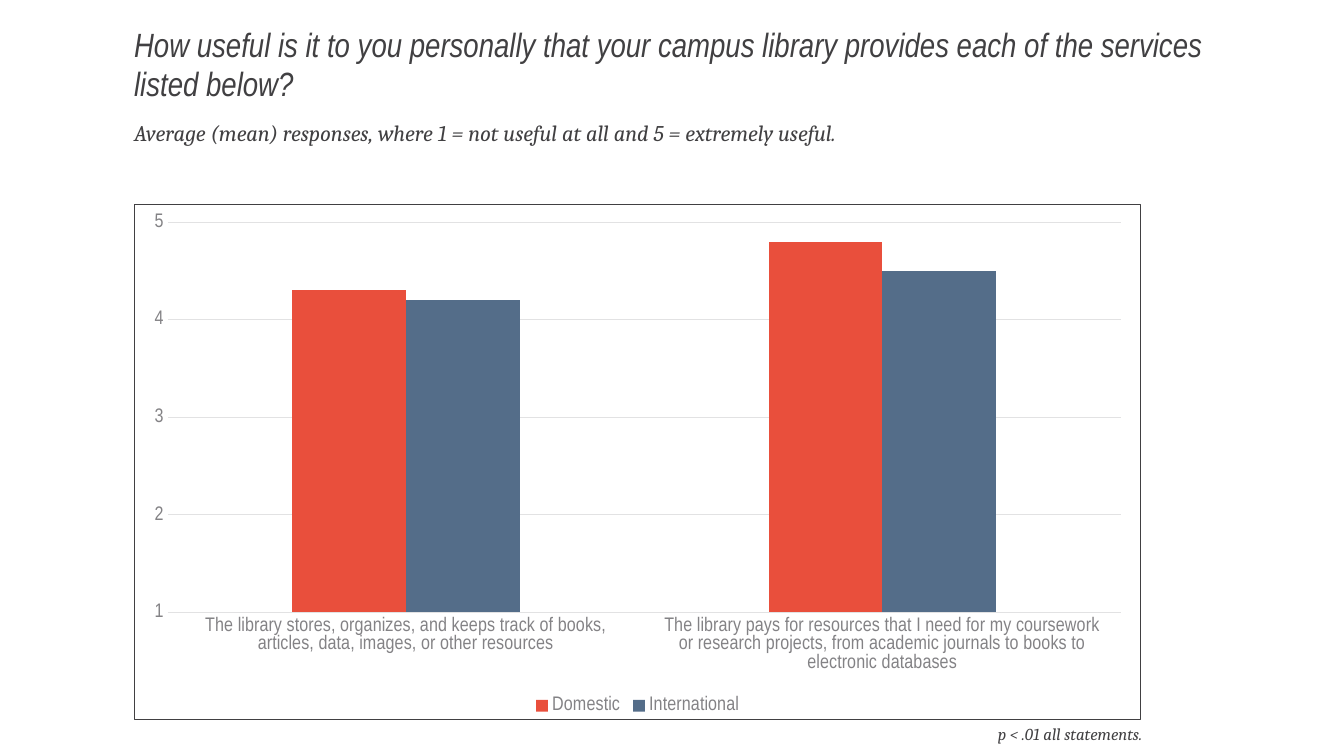
from dataclasses import dataclass

from lxml import etree
from pptx import Presentation
from pptx import util as u
from pptx.chart.data import CategoryChartData
from pptx.dml.color import RGBColor
from pptx.enum import chart as ch, text
from pptx.oxml import parse_xml
from pptx.oxml.ns import nsdecls, qn


@dataclass(frozen=True)
class Theme:
    ink: str = "414042"
    muted: str = "838285"
    grid: str = "E2E2E3"
    domestic: str = "E94F3C"
    international: str = "546D89"
    narrow: str = "Arial Narrow"
    serif: str = "Cambria"
    title: int = 24
    subtitle: int = 16
    axis: int = 14
    note: int = 12
    hairline: float = 0.75


theme = Theme()


def style_font(font, face, size, color, italic=False):
    font.name, font.size = face, u.Pt(size)
    font.bold, font.italic = False, italic
    font.color.rgb = RGBColor.from_string(color)


def write_line(frame, words, face, size, top, bottom, anchor, align):
    frame.word_wrap = True
    frame.auto_size = text.MSO_AUTO_SIZE.NONE
    frame.vertical_anchor = anchor
    frame.margin_left = frame.margin_right = 0
    frame.margin_top, frame.margin_bottom = u.Inches(top), u.Inches(bottom)
    line = frame.paragraphs[0]
    line.alignment = align
    run = line.add_run()
    run.text = words
    style_font(run.font, face, size, theme.ink, italic=True)
    return line


prs = Presentation()
prs.slide_width, prs.slide_height = u.Inches(13.33), u.Inches(7.5)
slide = prs.slides.add_slide(prs.slide_layouts[5])
left, width = u.Inches(1.33), u.Inches(9.99)

# Question
question = slide.shapes.title
question.left, question.top = left, u.Inches(0.27)
question.width, question.height = u.Inches(10.66), u.Inches(0.94)
question_line = write_line(
    question.text_frame,
    "How useful is it to you personally that your campus library provides each of the services listed below?",
    theme.narrow, theme.title, 0, 0, text.MSO_ANCHOR.TOP, text.PP_ALIGN.LEFT)
question_line.line_spacing = 0.95
question_line.space_before = u.Pt(0)

# Explanation of the scale
scale = slide.shapes.add_textbox(left, u.Inches(0.88), width, u.Inches(0.68))
write_line(
    scale.text_frame,
    "Average (mean) responses, where 1 = not useful at all and 5 = extremely useful.",
    theme.serif, theme.subtitle, 0.3, 0.11, text.MSO_ANCHOR.MIDDLE, text.PP_ALIGN.LEFT)

# Significance note
significance = slide.shapes.add_textbox(u.Inches(8.99), u.Inches(7.13), u.Inches(2.34), u.Inches(0.3))
write_line(
    significance.text_frame, "p < .01 all statements.",
    theme.serif, theme.note, 0.05, 0.05, text.MSO_ANCHOR.TOP, text.PP_ALIGN.RIGHT)

# Mean usefulness by student group
means = CategoryChartData(number_format="General")
means.categories = [
    "The library stores, organizes, and keeps track of books, articles, data, images, or other resources",
    "The library pays for resources that I need for my coursework or research projects, "
    "from academic journals to books to electronic databases",
]
means.add_series("Domestic", (4.3, 4.8))
means.add_series("International", (4.2, 4.5))
chart = slide.shapes.add_chart(
    ch.XL_CHART_TYPE.COLUMN_CLUSTERED, left, u.Inches(2.02), width, u.Inches(5.12), means).chart
chart.has_title = False
style_font(chart.font, theme.serif, 10, theme.ink)

bars = chart.plots[0]
bars.gap_width, bars.overlap, bars.vary_by_categories = 219, 0, False
for group, color in zip(bars.series, (theme.domestic, theme.international)):
    group.format.fill.solid()
    group.format.fill.fore_color.rgb = RGBColor.from_string(color)

# Axes, gridlines and legend
statements, rating = chart.category_axis, chart.value_axis
rating.minimum_scale, rating.maximum_scale, rating.major_unit = 1, 5, 1
rating.has_major_gridlines = True
rating.format.line.fill.background()
for axis in (statements, rating):
    axis.major_tick_mark = axis.minor_tick_mark = ch.XL_TICK_MARK.NONE
    style_font(axis.tick_labels.font, theme.narrow, theme.axis, theme.muted)
for rule in (statements.format.line, rating.major_gridlines.format.line):
    rule.color.rgb = RGBColor.from_string(theme.grid)
    rule.width = u.Pt(theme.hairline)
chart.has_legend = True
chart.legend.position = ch.XL_LEGEND_POSITION.BOTTOM
chart.legend.include_in_layout = False
style_font(chart.legend.font, theme.narrow, theme.axis, theme.muted)

# Plot position within the chart, as fractions
plot_area = chart.element.find(".//" + qn("c:plotArea"))
for old_layout in plot_area.findall(qn("c:layout")):
    plot_area.remove(old_layout)
layout = parse_xml(f"<c:layout {nsdecls('c')}><c:manualLayout/></c:layout>")
for tag, value in (("layoutTarget", "inner"), ("xMode", "edge"), ("yMode", "edge"),
                   ("x", 0.033), ("y", 0.035), ("w", 0.947), ("h", 0.758)):
    etree.SubElement(layout[0], qn("c:" + tag)).set("val", str(value))
plot_area.insert(0, layout)

# Chart border
border = parse_xml(
    f"<c:spPr {nsdecls('c', 'a')}><a:noFill/><a:ln w=\"{u.Pt(theme.hairline)}\"><a:solidFill>"
    f"<a:srgbClr val=\"{theme.ink}\"/></a:solidFill></a:ln></c:spPr>")
chart.element.find(qn("c:txPr")).addprevious(border)

prs.save("out.pptx")
